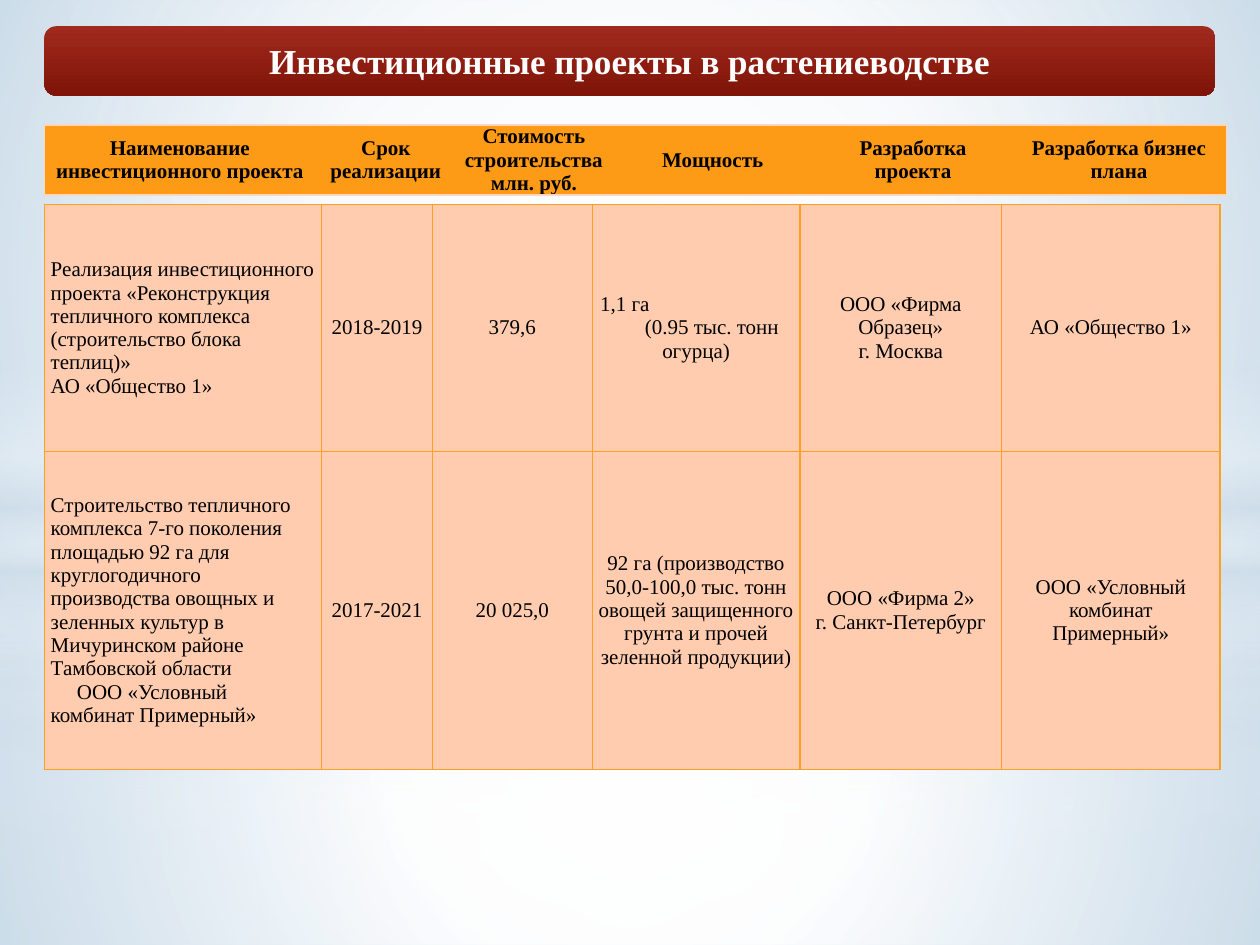
from dataclasses import dataclass

from pptx import Presentation, oxml
from pptx import util as u
from pptx.dml import color
from pptx.enum import shapes, text
from pptx.oxml import ns

Pt = u.Pt
FONT = "Times New Roman"
LEFT, MID = text.PP_ALIGN.LEFT, text.PP_ALIGN.CENTER
WIDE, HIGH = 720, 540
SKY, WHITE = "CCDDEA", "FFFFFF"
RECT, OVAL = shapes.MSO_SHAPE.RECTANGLE, shapes.MSO_SHAPE.OVAL


@dataclass
class Line:
    text: str
    align: int = MID
    indent: float = 0
    before: float = 0


@dataclass
class Grid:
    left: float
    top: float
    cols: list
    rows: list
    cells: list
    fill: str
    edge: str
    bold: bool = False
    inner: bool = True


@dataclass
class Stop:
    pos: int
    hue: str
    alpha: int = 100


def rgb(code: str) -> color.RGBColor:
    return color.RGBColor.from_string(code)


def apply(item, form: dict) -> None:
    for name, value in form.items():
        setattr(item, name, value)


def write(frame, lines: list, size: float, hue: str, bold: bool) -> None:
    for i, line in enumerate(lines):
        par = frame.paragraphs[0] if i == 0 else frame.add_paragraph()
        apply(par, {"alignment": line.align, "space_before": Pt(line.before)})
        if line.indent:
            par._p.get_or_add_pPr().set("indent", str(Pt(line.indent)))
        run = par.add_run()
        run.text = line.text
        apply(run.font, {"name": FONT, "size": Pt(size), "bold": bold})
        run.font.color.rgb = rgb(hue)


def shade(slide, kind, box: tuple, stops: list, round_: bool):
    """Add a shape with a radial or top-down gradient."""
    shape = slide.shapes.add_shape(kind, *map(Pt, box))
    shape.shadow.inherit = False
    shape.line.fill.background()
    shape.fill.background()
    marks = "".join(
        f'<a:gs pos="{s.pos * 1000}"><a:srgbClr val="{s.hue}">'
        f'<a:alpha val="{s.alpha * 1000}"/></a:srgbClr></a:gs>' for s in stops)
    way = ('<a:path path="circle"><a:fillToRect l="50000" t="50000" r="50000" b="50000"/></a:path>'
           if round_ else '<a:lin ang="5400000" scaled="0"/>')
    grad = oxml.parse_xml(
        f'<a:gradFill {ns.nsdecls("a")} rotWithShape="1"><a:gsLst>{marks}</a:gsLst>{way}</a:gradFill>')
    props = shape._element.spPr
    props.replace(props.find(ns.qn("a:noFill")), grad)
    return shape


def border(cell, side: str, hue: str) -> None:
    paint = f'<a:solidFill><a:srgbClr val="{hue}"/></a:solidFill>' if hue else "<a:noFill/>"
    cell._tc.get_or_add_tcPr().append(oxml.parse_xml(
        f'<a:ln{side} {ns.nsdecls("a")} w="{Pt(0.75)}">{paint}</a:ln{side}>'))


def table(slide, grid: Grid) -> None:
    rows, cols = len(grid.rows), len(grid.cols)
    tab = slide.shapes.add_table(rows, cols, Pt(grid.left), Pt(grid.top),
                                 Pt(sum(grid.cols)), Pt(sum(grid.rows))).table
    apply(tab, {"first_row": False, "horz_banding": False})
    for col, width in zip(tab.columns, grid.cols):
        col.width = Pt(width)
    for r, high in enumerate(grid.rows):
        tab.rows[r].height = Pt(high)
        for c, lines in enumerate(grid.cells[r]):
            cell = tab.cell(r, c)
            shown = {"L": grid.inner or c == 0, "R": grid.inner or c == cols - 1,
                     "T": True, "B": True}
            for side, on in shown.items():
                border(cell, side, grid.edge if on else "")
            cell.fill.solid()
            cell.fill.fore_color.rgb = rgb(grid.fill)
            apply(cell, {"margin_left": Pt(3.6), "margin_right": Pt(3.6), "margin_top": 0,
                         "margin_bottom": 0, "vertical_anchor": text.MSO_ANCHOR.MIDDLE})
            write(cell.text_frame, lines, 12, "000000", grid.bold)


def backdrop(slide) -> None:
    """Two layers of glow around a horizon."""
    slide.background.fill.solid()
    slide.background.fill.fore_color.rgb = rgb(SKY)
    floor = [Stop(0, WHITE, 91), Stop(37, WHITE, 76), Stop(100, SKY, 79)]
    air = [Stop(0, WHITE, 89), Stop(48, WHITE, 62), Stop(100, SKY, 79)]
    band = [Stop(0, WHITE, 0), Stop(29, WHITE, 30), Stop(45, SKY, 40),
            Stop(55, WHITE, 26), Stop(65, SKY, 60), Stop(100, WHITE, 0)]
    for level, strip, fade in ((402, 297, 56), (304.5, 209, 54)):
        shade(slide, RECT, (0, level, WIDE, HIGH - level), floor, True)
        shade(slide, RECT, (0, 0, WIDE, level), air, True)
        shade(slide, RECT, (0, strip, WIDE, 180), band, False)
        shade(slide, OVAL, (0, 126, WIDE, 402), [Stop(0, WHITE), Stop(fade, WHITE, 0)], True)


HEAD = ["Наименование инвестиционного проекта", "Срок реализации",
        "Стоимость строительства млн. руб.", "Мощность",
        "Разработка проекта", "Разработка бизнес плана"]
BODY = [
    [[Line("Реализация инвестиционного проекта «Реконструкция тепличного комплекса "
           "(строительство блока теплиц)»", LEFT), Line("АО «Общество 1»", LEFT)],
     [Line("2018-2019")],
     [Line("379,6")],
     [Line("1,1 га", LEFT, 1), Line("(0.95 тыс. тонн огурца)", MID, 18)],
     [Line("ООО «Фирма Образец»"), Line("г. Москва")],
     [Line("АО «Общество 1»")]],
    [[Line("Строительство тепличного комплекса 7-го поколения площадью 92 га для "
           "круглогодичного производства овощных и зеленных культур в Мичуринском "
           "районе Тамбовской области", LEFT, before=5),
      Line("ООО «Условный комбинат Примерный»", LEFT, 15)],
     [Line("2017-2021")],
     [Line("20 025,0")],
     [Line("92 га (производство 50,0-100,0 тыс. тонн овощей защищенного грунта "
           "и прочей зеленной продукции)")],
     [Line("ООО «Фирма 2»"), Line("г. Санкт-Петербург")],
     [Line("ООО «Условный комбинат Примерный»")]],
]


def main() -> None:
    deck = Presentation()
    apply(deck, {"slide_width": Pt(WIDE), "slide_height": Pt(HIGH)})
    slide = deck.slides.add_slide(deck.slide_layouts[6])
    backdrop(slide)

    # Projects, then their headings
    table(slide, Grid(25.4, 116.8, [158.4, 63.4, 91.2, 118.8, 115.2, 124.8], [141.2, 181.8],
                      BODY, "FFCCB0", "FDA023"))
    table(slide, Grid(25.4, 71.4, [154.8, 80.6, 88.6, 115.9, 113, 122.4], [39.8],
                      [[[Line(word)] for word in HEAD]], "FD9A16", "FED6BD", True, False))

    # Title bar
    bar = shade(slide, shapes.MSO_SHAPE.ROUNDED_RECTANGLE, (25.4, 15, 669, 39.6),
                [Stop(0, "A1291D"), Stop(100, "7F1408")], False)
    apply(bar.text_frame, {"word_wrap": True, "vertical_anchor": text.MSO_ANCHOR.MIDDLE})
    write(bar.text_frame, [Line("Инвестиционные проекты в растениеводстве")], 20, WHITE, True)
    deck.save("out.pptx")


if __name__ == "__main__":
    main()
